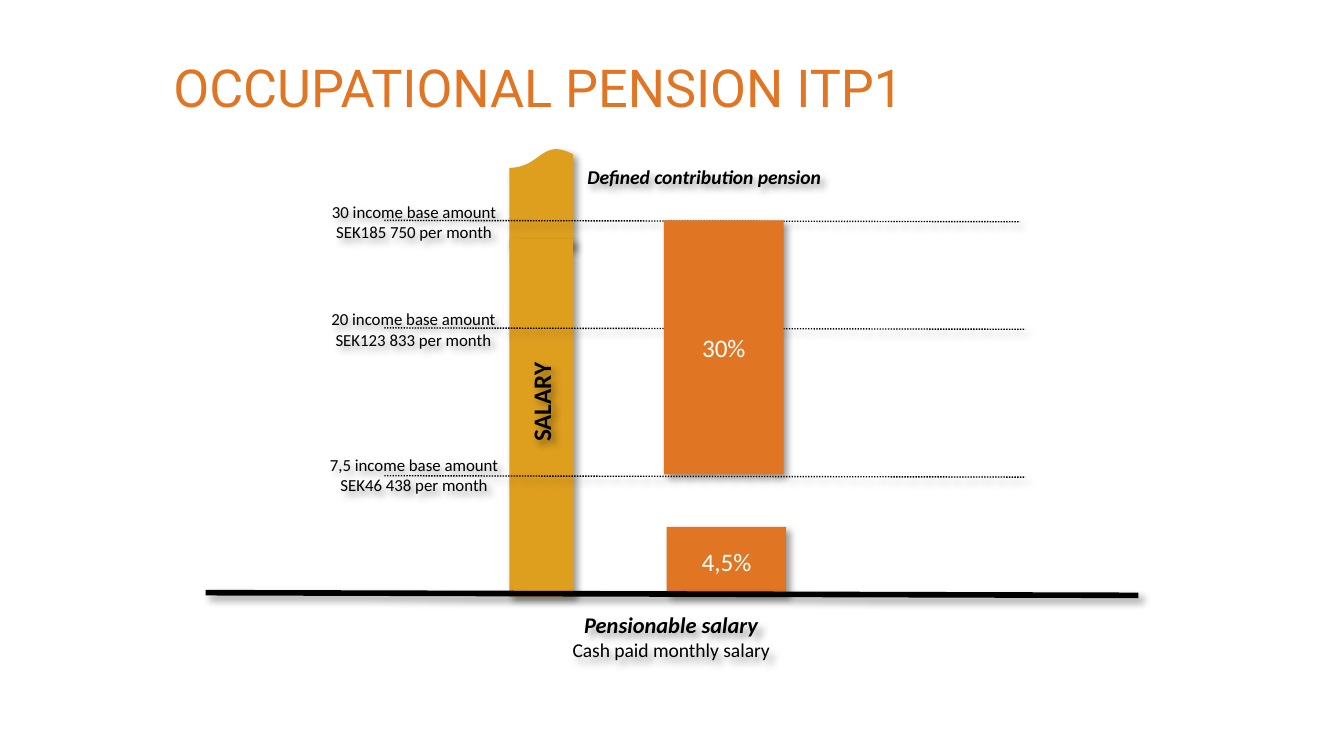
"""Build a slide that shows how ITP1 pension contributions follow salary levels."""
from dataclasses import dataclass, field

from lxml import etree
from pptx import Presentation
from pptx import util as u
from pptx.dml.color import RGBColor
from pptx.enum import dml, shapes, text
from pptx.oxml import ns

COLORS = {"orange": "E07523", "gold": "DE9F1F", "black": "000000", "white": "FFFFFF"}
WIDTH = u.Inches(10)
HEIGHT = WIDTH * 9 // 16
COLUMN = ROW = WIDTH / 100
CENTER, LEFT = text.PP_ALIGN.CENTER, text.PP_ALIGN.LEFT
TOP, MIDDLE = text.MSO_ANCHOR.TOP, text.MSO_ANCHOR.MIDDLE
FIXED, GROW = text.MSO_AUTO_SIZE.NONE, text.MSO_AUTO_SIZE.SHAPE_TO_FIT_TEXT
NO_MARGINS = dict.fromkeys(("margin_left", "margin_top", "margin_right", "margin_bottom"), 0)


@dataclass
class Area:
    column: float
    row: float
    columns: float
    rows: float

    def box(self) -> tuple[int, int, int, int]:
        return (round(self.column * COLUMN), round(self.row * ROW),
                round(self.columns * COLUMN), round(self.rows * ROW))


@dataclass
class Line:
    words: str
    size: float
    bold: bool = False
    italic: bool = False
    color: str = "black"
    font: str = "Calibri"


@dataclass
class Label:
    area: Area
    lines: list[Line]
    align: int = CENTER
    rotation: float = 0
    frame: dict = field(
        default_factory=lambda: {"word_wrap": True, "auto_size": GROW, **NO_MARGINS})


@dataclass
class Bar:
    area: Area
    color: str
    kind: int = shapes.MSO_SHAPE.RECTANGLE
    rotation: float = 0
    value: str = ""


@dataclass
class Rule:
    start: tuple[float, float]
    end: tuple[float, float]
    width: float = 0.75
    dash: int | None = dml.MSO_LINE.ROUND_DOT


def apply(target: object, values: dict) -> None:
    """Set every attribute in the dict on the target."""
    for name, value in values.items():
        setattr(target, name, value)


def rgb(name: str) -> RGBColor:
    """Return the named palette colour."""
    return RGBColor.from_string(COLORS[name])


def add_shadow(shape: object) -> None:
    """Give the shape a soft shadow towards the lower right."""
    properties = shape._element.spPr
    effects = etree.SubElement(properties, ns.qn("a:effectLst"))
    outer = etree.SubElement(effects, ns.qn("a:outerShdw"), blurRad=str(u.Pt(4)),
                             dist=str(u.Pt(3)), dir=str(45 * 60000), rotWithShape="0")
    color = etree.SubElement(outer, ns.qn("a:srgbClr"), val=COLORS["black"])
    etree.SubElement(color, ns.qn("a:alpha"), val="40000")


def write(shape: object, lines: list[Line], align: int, frame: dict) -> None:
    """Write the lines into one paragraph of the shape."""
    apply(shape.text_frame, frame)
    paragraph = shape.text_frame.paragraphs[0]
    paragraph.alignment = align
    for index, line in enumerate(lines):
        if index:
            paragraph.add_line_break()
        run = paragraph.add_run()
        run.text = line.words
        apply(run.font, {"name": line.font, "size": u.Pt(line.size),
                         "bold": line.bold, "italic": line.italic})
        run.font.color.rgb = rgb(line.color)


def draw_title(slide: object) -> None:
    """Place and format the title."""
    title = slide.shapes.title
    apply(title, dict(zip(("left", "top", "width", "height"), Area(11.9, 4.4, 75, 5.7).box())))
    write(title, [Line("OCCUPATIONAL PENSION ITP1", 28, color="orange", font="Roboto")], LEFT,
          {"vertical_anchor": TOP, "auto_size": FIXED, "word_wrap": True})
    title.text_frame.paragraphs[0].line_spacing = 0.83


def draw_bar(slide: object, bar: Bar) -> None:
    """Draw a filled bar with its value, if any."""
    shape = slide.shapes.add_shape(bar.kind, *bar.area.box())
    shape.rotation = bar.rotation
    shape.fill.solid()
    shape.fill.fore_color.rgb = rgb(bar.color)
    shape.line.fill.background()
    add_shadow(shape)
    if bar.value:
        write(shape, [Line(bar.value, 13.5, color="white")], CENTER,
              {"vertical_anchor": MIDDLE, "word_wrap": False, **NO_MARGINS})


def draw_rule(slide: object, rule: Rule) -> None:
    """Draw a straight line between two grid points."""
    (x1, y1), (x2, y2) = rule.start, rule.end
    connector = slide.shapes.add_connector(
        shapes.MSO_CONNECTOR.STRAIGHT,
        *(round(value) for value in (x1 * COLUMN, y1 * ROW, x2 * COLUMN, y2 * ROW)))
    connector.line.color.rgb = rgb("black")
    apply(connector.line, {"width": u.Pt(rule.width), "dash_style": rule.dash})
    add_shadow(connector)


def draw_label(slide: object, label: Label) -> None:
    """Draw a shadowed text box."""
    box = slide.shapes.add_textbox(*label.area.box())
    box.rotation = label.rotation
    box.fill.background()
    write(box, label.lines, label.align, label.frame)
    add_shadow(box)


def level(area: Area, amount: str, salary: str) -> Label:
    """Describe the label of an income level."""
    return Label(area, [Line(f"{amount} income base amount", 9),
                        Line(f"SEK{salary} per month", 9)])


SALARY_BARS = [
    Bar(Area(37.9, 11, 4.75, 7.5), "gold", shapes.MSO_SHAPE.FLOWCHART_DOCUMENT, 180),
    Bar(Area(37.9, 17.8, 4.75, 26.6), "gold"),
]
LOWER_BAR = Bar(Area(49.6, 39.2, 8.9, 5.1), "orange", value="4,5%")
UPPER_BAR = Bar(Area(49.4, 16.4, 8.9, 18.9), "orange", value="30%")
RULES = [
    *(Rule((28.6, row), (end, row + 0.1))
      for row, end in ((16.4, 75.9), (24.4, 76.3), (35.4, 76.3))),
    Rule((15.3, 44.1), (84.7, 44.3), 3, None),
]
CAPTION = Label(Area(15.3, 45, 69.3, 4.2),
                [Line("Pensionable salary", 12, True, True),
                 Line("Cash paid monthly salary", 10.5)],
                frame={"word_wrap": True})
LABELS = [
    Label(Area(43.7, 12.25, 20.7, 1.8),
          [Line("Defined contribution pension", 10.5, True, True)], LEFT),
    level(Area(23.3, 15, 15, 3), "30", "185 750"),
    level(Area(22.8, 23, 15.9, 3), "20", "123 833"),
    level(Area(23.45, 33.85, 14.7, 3), "7,5", "46 438"),
    Label(Area(36.3, 28.2, 8, 3.3), [Line("SALARY", 13.5, True)], LEFT, 270,
          {"word_wrap": False, "auto_size": GROW}),
]


def main() -> None:
    """Build and save the presentation."""
    presentation = Presentation()
    apply(presentation, {"slide_width": WIDTH, "slide_height": HEIGHT})
    slide = presentation.slides.add_slide(presentation.slide_layouts.get_by_name("Title Only"))
    draw_title(slide)
    draw_bar(slide, SALARY_BARS[0])
    draw_label(slide, CAPTION)
    for bar in (SALARY_BARS[1], LOWER_BAR):
        draw_bar(slide, bar)
    for rule in RULES:
        draw_rule(slide, rule)
    for label in LABELS:
        draw_label(slide, label)
    draw_bar(slide, UPPER_BAR)
    presentation.save("out.pptx")


if __name__ == "__main__":
    main()
